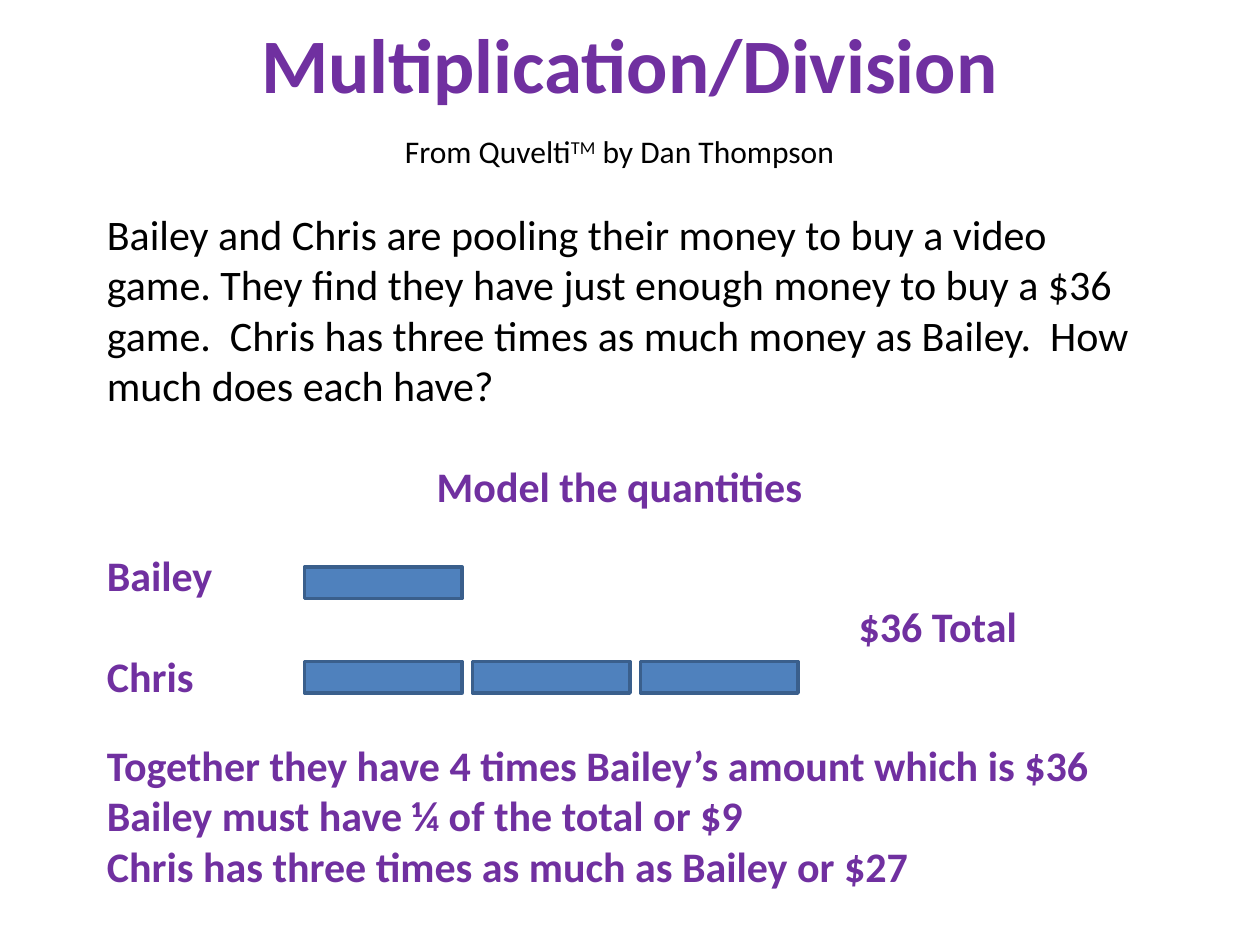
from dataclasses import dataclass

from pptx import Presentation
from pptx import util as u
from pptx.dml.color import RGBColor
from pptx.enum import shapes, text

PX = u.Inches(1) // 120
FONT = "Calibri"
PURPLE = RGBColor(0x70, 0x30, 0xA0)
BLACK = RGBColor(0x00, 0x00, 0x00)
BLUE = RGBColor(0x4F, 0x81, 0xBD)
DARK_BLUE = RGBColor(0x3A, 0x5F, 0x8C)

UNIT_WIDTH, UNIT_HEIGHT, UNIT_PITCH = 150, 30, 160
UNITS_LEFT = 290


@dataclass
class Span:
    text: str
    baseline: int = 0


@dataclass
class Line:
    spans: list[Span]
    size: int = 24
    color: RGBColor = PURPLE
    bold: bool = True
    centered: bool = False
    space_before: int = 0
    indent: int = 0


@dataclass
class Bar:
    top: int
    units: int


TITLE = [Line([Span("Multiplication/Division")], size=44, centered=True)]
BODY = [
    Line([Span("From Quvelti"), Span("TM", 30000), Span(" by Dan Thompson")],
         size=18, color=BLACK, bold=False, centered=True),
    Line([Span("Bailey and Chris are pooling their money to buy a video game. "
               "They find they have just enough money to buy a $36 game.  "
               "Chris has three times as much money as Bailey.  "
               "How much does each have?")],
         color=BLACK, bold=False, space_before=22),
    Line([Span("Model the quantities")], centered=True, space_before=29),
    Line([Span("Bailey")], space_before=22),
    Line([Span("$36 Total")], indent=716),
    Line([Span("Chris")]),
    Line([Span("Together they have 4 times Bailey’s amount which is $36")],
         space_before=22),
    Line([Span("Bailey must have ¼ of the total or $9")]),
    Line([Span("Chris has three times as much as Bailey or $27")]),
]
BARS = [Bar(top=540, units=1), Bar(top=630, units=3)]


def add_text(page, left: int, top: int, width: int, height: int,
             lines: list[Line], anchor=text.MSO_ANCHOR.TOP) -> None:
    box = page.shapes.add_textbox(left * PX, top * PX, width * PX, height * PX)
    frame = box.text_frame
    frame.word_wrap = True
    frame.vertical_anchor = anchor
    for index, line in enumerate(lines):
        para = frame.add_paragraph() if index else frame.paragraphs[0]
        para.alignment = text.PP_ALIGN.CENTER if line.centered else text.PP_ALIGN.LEFT
        para.space_before = u.Pt(line.space_before)
        para.font.name = FONT
        para.font.size = u.Pt(line.size)
        para.font.bold = line.bold
        para.font.color.rgb = line.color
        if line.indent:
            para._p.get_or_add_pPr().set("marL", str(line.indent * PX))
        for span in line.spans:
            run = para.add_run()
            run.text = span.text
            if span.baseline:
                run._r.get_or_add_rPr().set("baseline", str(span.baseline))


def add_bar(page, bar: Bar) -> None:
    for index in range(bar.units):
        unit = page.shapes.add_shape(
            shapes.MSO_SHAPE.RECTANGLE,
            (UNITS_LEFT + index * UNIT_PITCH) * PX, bar.top * PX,
            UNIT_WIDTH * PX, UNIT_HEIGHT * PX)
        unit.shadow.inherit = False
        unit.fill.solid()
        unit.fill.fore_color.rgb = BLUE
        unit.line.color.rgb = DARK_BLUE
        unit.line.width = u.Pt(2)


def main() -> None:
    deck = Presentation()
    deck.slide_width, deck.slide_height = 1200 * PX, 900 * PX
    page = deck.slides.add_slide(deck.slide_layouts[6])
    add_text(page, 60, 10, 1080, 100, TITLE, text.MSO_ANCHOR.MIDDLE)
    add_text(page, 90, 120, 1000, 739, BODY)
    for bar in BARS:
        add_bar(page, bar)
    deck.save("out.pptx")


if __name__ == "__main__":
    main()
